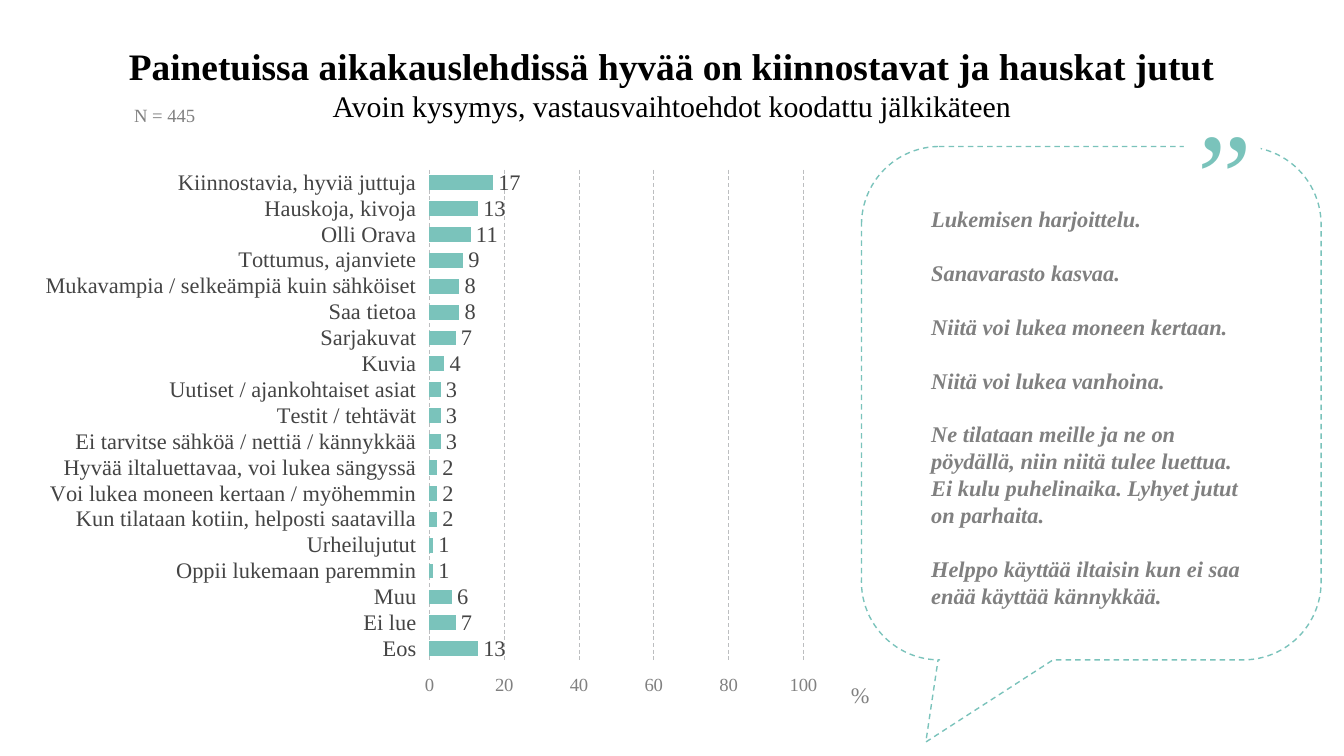
from dataclasses import dataclass

from lxml import etree
from pptx import Presentation
from pptx.chart.data import CategoryChartData
from pptx.dml.color import RGBColor
from pptx.enum import chart as charts, dml, shapes, text
from pptx.oxml import ns
from pptx.util import Inches, Pt


@dataclass(frozen=True)
class Theme:
    font: str = "Times New Roman"
    teal: str = "7AC3BB"
    black: str = "000000"
    dark: str = "444444"
    grey: str = "808080"
    grid: str = "BCBEC0"
    white: str = "FFFFFF"
    title: int = 20
    subtitle: int = 16
    body: int = 12
    small: int = 10
    quote_mark: int = 66


THEME = Theme()

ANSWERS = {
    "Kiinnostavia, hyviä juttuja": 17,
    "Hauskoja, kivoja": 13,
    "Olli Orava": 11,
    "Tottumus, ajanviete": 9,
    "Mukavampia / selkeämpiä kuin sähköiset": 8,
    "Saa tietoa": 8,
    "Sarjakuvat": 7,
    "Kuvia": 4,
    "Uutiset / ajankohtaiset asiat": 3,
    "Testit / tehtävät": 3,
    "Ei tarvitse sähköä / nettiä / kännykkää": 3,
    "Hyvää iltaluettavaa, voi lukea sängyssä": 2,
    "Voi lukea moneen kertaan / myöhemmin": 2,
    "Kun tilataan kotiin, helposti saatavilla": 2,
    "Urheilujutut": 1,
    "Oppii lukemaan paremmin": 1,
    "Muu": 6,
    "Ei lue": 7,
    "Eos": 13,
}

QUOTES = [
    "Lukemisen harjoittelu.",
    "Sanavarasto kasvaa.",
    "Niitä voi lukea moneen kertaan.",
    "Niitä voi lukea vanhoina.",
    "Ne tilataan meille ja ne on pöydällä, niin niitä tulee luettua. "
    "Ei kulu puhelinaika. Lyhyet jutut on parhaita.",
    "Helppo käyttää iltaisin kun ei saa enää käyttää kännykkää.",
]


def style_font(font, size, color, bold=False, italic=False):
    font.name = THEME.font
    font.size = Pt(size)
    font.bold = bold
    font.italic = italic
    font.color.rgb = RGBColor.from_string(color)


def add_span(para, words, **style):
    span = para.add_run()
    span.text = words
    style_font(span.font, **style)


def add_text_box(page, left, top, width, height, anchor=text.MSO_ANCHOR.TOP):
    box = page.shapes.add_textbox(*map(Inches, (left, top, width, height)))
    box.text_frame.word_wrap = True
    box.text_frame.vertical_anchor = anchor
    return box.text_frame


def add_white_shape(page, kind, left, top, width, height):
    shape = page.shapes.add_shape(kind, *map(Inches, (left, top, width, height)))
    shape.shadow.inherit = False
    shape.fill.solid()
    shape.fill.fore_color.rgb = RGBColor.from_string(THEME.white)
    return shape


def set_layout(parent, index, **settings):
    """Place a chart part by fractions of the chart area."""
    for old in parent.findall(ns.qn("c:layout")):
        parent.remove(old)
    layout = etree.Element(ns.qn("c:layout"))
    manual = etree.SubElement(layout, ns.qn("c:manualLayout"))
    for name, value in settings.items():
        etree.SubElement(manual, ns.qn(f"c:{name}")).set("val", str(value))
    parent.insert(index, layout)


def add_heading(page, left, top, width, height):
    frame = add_text_box(page, left, top, width, height, text.MSO_ANCHOR.MIDDLE)
    para = frame.paragraphs[0]
    para.alignment = text.PP_ALIGN.CENTER
    add_span(para, "Painetuissa aikakauslehdissä hyvää on kiinnostavat ja hauskat jutut",
             size=THEME.title, color=THEME.black, bold=True)
    para.add_line_break()
    add_span(para, "Avoin kysymys, vastausvaihtoehdot koodattu jälkikäteen",
             size=THEME.subtitle, color=THEME.black)


def add_sample_size(page, left, top, width, height):
    frame = add_text_box(page, left, top, width, height)
    add_span(frame.paragraphs[0], "N = 445", size=THEME.small, color=THEME.grey)


def style_axes(chart):
    categories, values = chart.category_axis, chart.value_axis
    for axis, size, color in ((categories, THEME.body, THEME.dark),
                              (values, THEME.small, THEME.grey)):
        axis.major_tick_mark = axis.minor_tick_mark = charts.XL_TICK_MARK.NONE
        axis.format.line.fill.background()
        style_font(axis.tick_labels.font, size, color)

    categories.reverse_order = True
    categories.tick_label_position = charts.XL_TICK_LABEL_POSITION.LOW
    categories.has_major_gridlines = False

    # Reversed categories put the value axis on top; HIGH moves its labels below.
    values.tick_label_position = charts.XL_TICK_LABEL_POSITION.HIGH
    values.minimum_scale, values.maximum_scale, values.major_unit = 0, 100, 20
    grid = values.major_gridlines.format.line
    grid.color.rgb = RGBColor.from_string(THEME.grid)
    grid.width = Pt(0.5)
    grid.dash_style = dml.MSO_LINE.DASH

    title = values.axis_title
    add_span(title.text_frame.paragraphs[0], "%", size=THEME.body, color=THEME.grey)
    set_layout(title._element, 1, xMode="edge", yMode="edge", x=0.96, y=0.94)


def add_answer_chart(page, left, top, width, height):
    data = CategoryChartData(number_format="General")
    data.categories = list(ANSWERS)
    data.add_series("Series 1", list(ANSWERS.values()))
    frame = page.shapes.add_chart(charts.XL_CHART_TYPE.BAR_CLUSTERED,
                                  *map(Inches, (left, top, width, height)), data)
    chart = frame.chart
    chart.has_legend = chart.has_title = False
    style_font(chart.font, THEME.body, THEME.dark)
    style_axes(chart)

    plot = chart.plots[0]
    plot.gap_width = 75
    plot.vary_by_categories = False
    series = plot.series[0]
    series.format.fill.solid()
    series.format.fill.fore_color.rgb = RGBColor.from_string(THEME.teal)

    labels = series.data_labels
    labels.show_value = True
    labels.position = charts.XL_LABEL_POSITION.OUTSIDE_END
    labels.number_format = "#,##0"
    labels.number_format_is_linked = False
    style_font(labels.font, THEME.body, THEME.dark)

    plot_area = chart._chartSpace.find(".//" + ns.qn("c:plotArea"))
    set_layout(plot_area, 0, layoutTarget="inner", xMode="edge", yMode="edge",
               x=0.48, y=0, w=0.43, h=0.91)


def add_quote_bubble(page, left, top, width, height):
    bubble = add_white_shape(page, shapes.MSO_SHAPE.ROUNDED_RECTANGULAR_CALLOUT,
                             left, top, width, height)
    for index, value in enumerate((-0.36, 0.66, 0.17)):
        bubble.adjustments[index] = value
    bubble.line.color.rgb = RGBColor.from_string(THEME.teal)
    bubble.line.width = Pt(0.75)
    bubble.line.dash_style = dml.MSO_LINE.DASH

    frame = add_text_box(page, left + 0.42, top + 0.39, 2.59, 3.37)
    for index, quote in enumerate(QUOTES):
        para = frame.add_paragraph() if index else frame.paragraphs[0]
        if index:
            para.space_before = Pt(14.4)
        add_span(para, quote, size=THEME.body, color=THEME.grey, bold=True, italic=True)

    mark = add_white_shape(page, shapes.MSO_SHAPE.RECTANGLE,
                           left + 2.4, top - 0.42, 0.57, 1.21)
    mark.line.fill.background()
    mark.text_frame.vertical_anchor = text.MSO_ANCHOR.TOP
    para = mark.text_frame.paragraphs[0]
    para.alignment = text.PP_ALIGN.LEFT
    add_span(para, "”", size=THEME.quote_mark, color=THEME.teal)


def main():
    deck = Presentation()
    deck.slide_width = Inches(10)
    deck.slide_height = deck.slide_width * 9 // 16
    page = deck.slides.add_slide(deck.slide_layouts[6])
    add_heading(page, 0, 0.15, 10, 0.94)
    add_answer_chart(page, 0.09, 1.26, 6.47, 4.06)
    add_sample_size(page, 0.9, 0.72, 0.9, 0.27)
    add_quote_bubble(page, 6.41, 1.09, 3.42, 3.82)
    deck.save("out.pptx")


if __name__ == "__main__":
    main()
